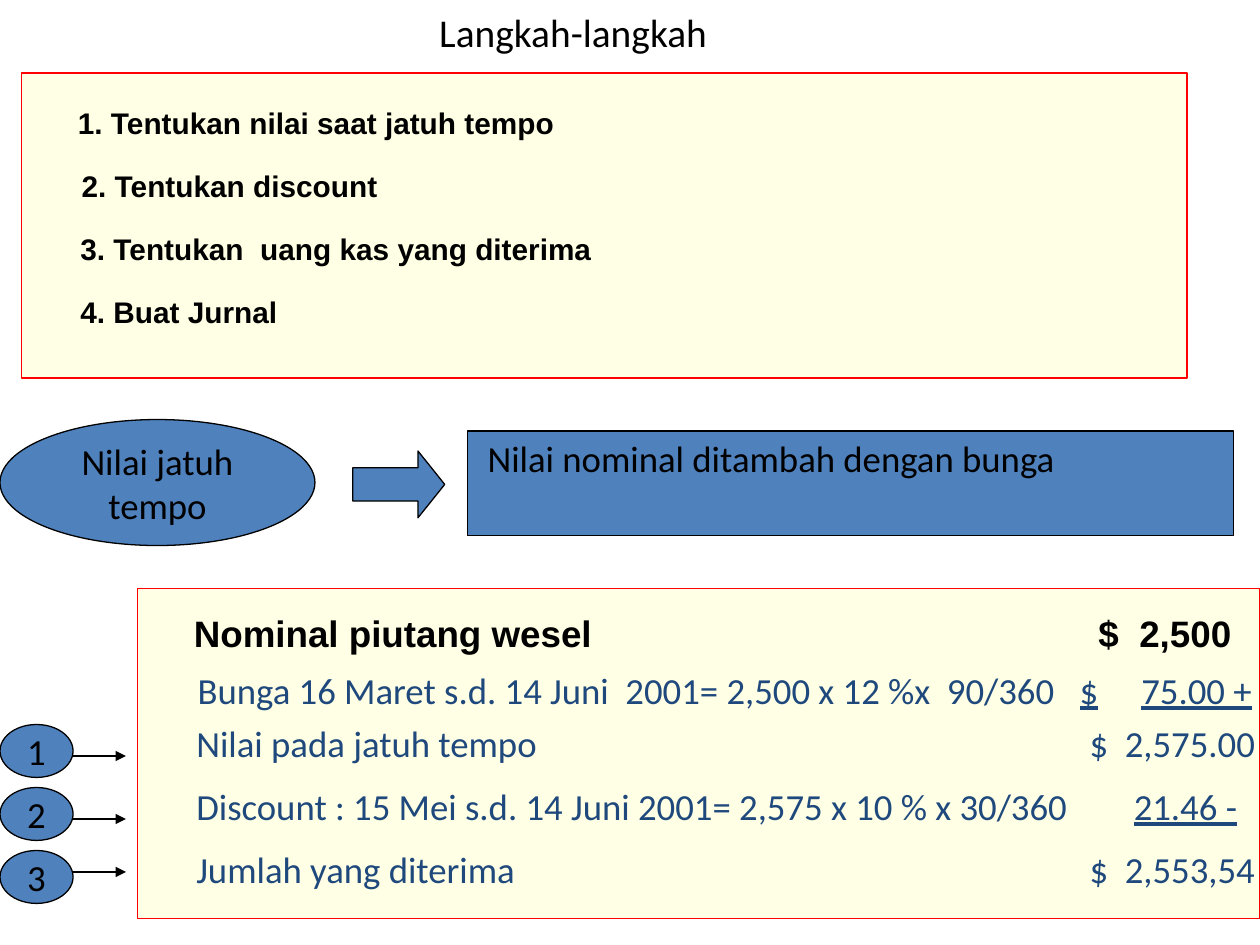
from dataclasses import dataclass

from lxml.etree import SubElement
from pptx import Presentation
from pptx.dml.color import RGBColor
from pptx.enum.shapes import MSO_CONNECTOR, MSO_SHAPE
from pptx.enum.text import MSO_ANCHOR, PP_ALIGN
from pptx.oxml.ns import qn
from pptx.util import Inches, Pt


@dataclass(frozen=True)
class Theme:
    black: str = "000000"
    blue: str = "4F81BD"
    navy: str = "1F497D"
    cream: str = "FFFFCC"
    red: str = "FF0000"
    body_font: str = "Calibri"
    strong_font: str = "Arial"
    title_size: float = 22.5
    body_size: float = 21
    step_size: float = 17
    line_width: float = 0.75


class SlideBuilder:
    def __init__(self, slide, theme):
        self.slide = slide
        self.theme = theme

    def style(self, paragraph, size, color, strong=False):
        for span in paragraph.runs:
            span.font.size = Pt(size)
            span.font.bold = strong
            span.font.name = self.theme.strong_font if strong else self.theme.body_font
            span.font.color.rgb = RGBColor.from_string(color)

    def shape(self, kind, left, top, width, height, fill=None, line=None):
        shape = self.slide.shapes.add_shape(
            kind, Inches(left), Inches(top), Inches(width), Inches(height))
        shape.shadow.inherit = False
        shape.fill.solid()
        shape.fill.fore_color.rgb = RGBColor.from_string(fill or self.theme.blue)
        shape.line.color.rgb = RGBColor.from_string(line or self.theme.black)
        shape.line.width = Pt(self.theme.line_width)
        return shape

    def label(self, shape, text, align=PP_ALIGN.CENTER, anchor=MSO_ANCHOR.MIDDLE,
              inset=0.0, wrap=True):
        frame = shape.text_frame
        frame.text = text
        frame.word_wrap = wrap
        frame.vertical_anchor = anchor
        frame.margin_left = frame.margin_right = Inches(inset)
        frame.margin_top = frame.margin_bottom = Inches(0.04)
        para = frame.paragraphs[0]
        para.alignment = align
        self.style(para, self.theme.body_size, self.theme.black)

    def panel(self, left, top, width, height):
        """Add a half-transparent cream rectangle with a red outline."""
        panel = self.shape(MSO_SHAPE.RECTANGLE, left, top, width, height,
                           self.theme.cream, self.theme.red)
        color = panel.fill._xPr.find(qn("a:solidFill"))[0]
        SubElement(color, qn("a:alpha")).set("val", "50000")

    def text(self, left, top, width, height, text, size, color, strong=False):
        box = self.slide.shapes.add_textbox(
            Inches(left), Inches(top), Inches(width), Inches(height))
        frame = box.text_frame
        frame.word_wrap = True
        frame.margin_right = 0
        para = frame.paragraphs[0]
        para.text = text
        self.style(para, size, color, strong)
        return box

    def ledger_row(self, left, top, text, tabs, color, underlined="", strong=False):
        """Add a row whose amounts sit on tab stops, measured from the text edge."""
        box = self.text(left, top, 10 - left, 0.45, text,
                        self.theme.body_size, color, strong)
        para = box.text_frame.paragraphs[0]
        if underlined:
            span = para.add_run()
            span.text = underlined
            span.font.underline = True
            self.style(para, self.theme.body_size, color, strong)
        stops = SubElement(para._p.get_or_add_pPr(), qn("a:tabLst"))
        for position in tabs:
            stop = SubElement(stops, qn("a:tab"))
            stop.set("pos", str(Inches(position)))
            stop.set("algn", "l")

    def arrow(self, left, right, y):
        arrow = self.slide.shapes.add_connector(
            MSO_CONNECTOR.STRAIGHT, Inches(left), Inches(y), Inches(right), Inches(y))
        arrow.line.color.rgb = RGBColor.from_string(self.theme.black)
        arrow.line.width = Pt(self.theme.line_width)
        SubElement(arrow.line._get_or_add_ln(), qn("a:tailEnd")).set("type", "triangle")
        SubElement(arrow._element.spPr, qn("a:effectLst"))


def main():
    deck = Presentation()
    deck.slide_width, deck.slide_height = Inches(10), Inches(7.5)
    theme = Theme()
    page = SlideBuilder(deck.slides.add_slide(deck.slide_layouts[6]), theme)

    title = page.text(0, 0, 9.1, 0.5, "Langkah-langkah", theme.title_size, theme.black)
    title.text_frame.margin_left = 0
    title.text_frame.vertical_anchor = MSO_ANCHOR.MIDDLE
    title.text_frame.paragraphs[0].alignment = PP_ALIGN.CENTER

    definition = page.shape(MSO_SHAPE.RECTANGLE, 3.71, 3.42, 6.08, 0.83)
    page.label(definition, "Nilai nominal ditambah dengan bunga",
               PP_ALIGN.LEFT, MSO_ANCHOR.TOP, inset=0.16)
    term = page.shape(MSO_SHAPE.OVAL, 0, 3.33, 2.5, 1)
    page.label(term, "Nilai jatuh tempo")
    pointer = page.shape(MSO_SHAPE.RIGHT_ARROW, 2.8, 3.58, 0.73, 0.53)
    pointer.adjustments[1] = 0.4

    page.panel(0.17, 0.58, 9.25, 2.42)
    steps = [
        (0.52, "1. Tentukan nilai saat jatuh tempo"),
        (0.55, "2. Tentukan discount"),
        (0.54, "3. Tentukan  uang kas yang diterima"),
        (0.54, "4. Buat Jurnal"),
    ]
    for index, (left, step) in enumerate(steps):
        page.text(left, 0.78 + 0.5 * index, 4.5, 0.39, step,
                  theme.step_size, theme.black, strong=True)

    for index, arrow_y in enumerate((6, 6.5, 6.92)):
        number = page.shape(MSO_SHAPE.OVAL, 0, 5.75 + 0.5 * index, 0.58, 0.42)
        page.label(number, str(index + 1), inset=0.09, wrap=False)
        page.arrow(0.58, 1, arrow_y)

    page.panel(1.09, 4.67, 8.91, 2.62)
    page.ledger_row(1.44, 4.8, "Nominal piutang wesel\t$  2,500", [7.18],
                    theme.black, strong=True)
    page.ledger_row(1.47, 5.25,
                    "Bunga 16 Maret s.d. 14 Juni  2001= 2,500 x 12 %x  90/360\t",
                    [7, 7.49], theme.navy, underlined="$\t75.00 +")
    page.ledger_row(1.46, 5.67, "Nilai pada jatuh tempo\t$  2,575.00", [7.09], theme.navy)
    page.ledger_row(1.46, 6.17,
                    "Discount : 15 Mei s.d. 14 Juni 2001= 2,575 x 10 % x 30/360 ",
                    [7.44], theme.navy, underlined="\t21.46 -")
    page.ledger_row(1.46, 6.67, "Jumlah yang diterima\t$  2,553,54", [7.09], theme.navy)

    deck.save("out.pptx")


if __name__ == "__main__":
    main()
